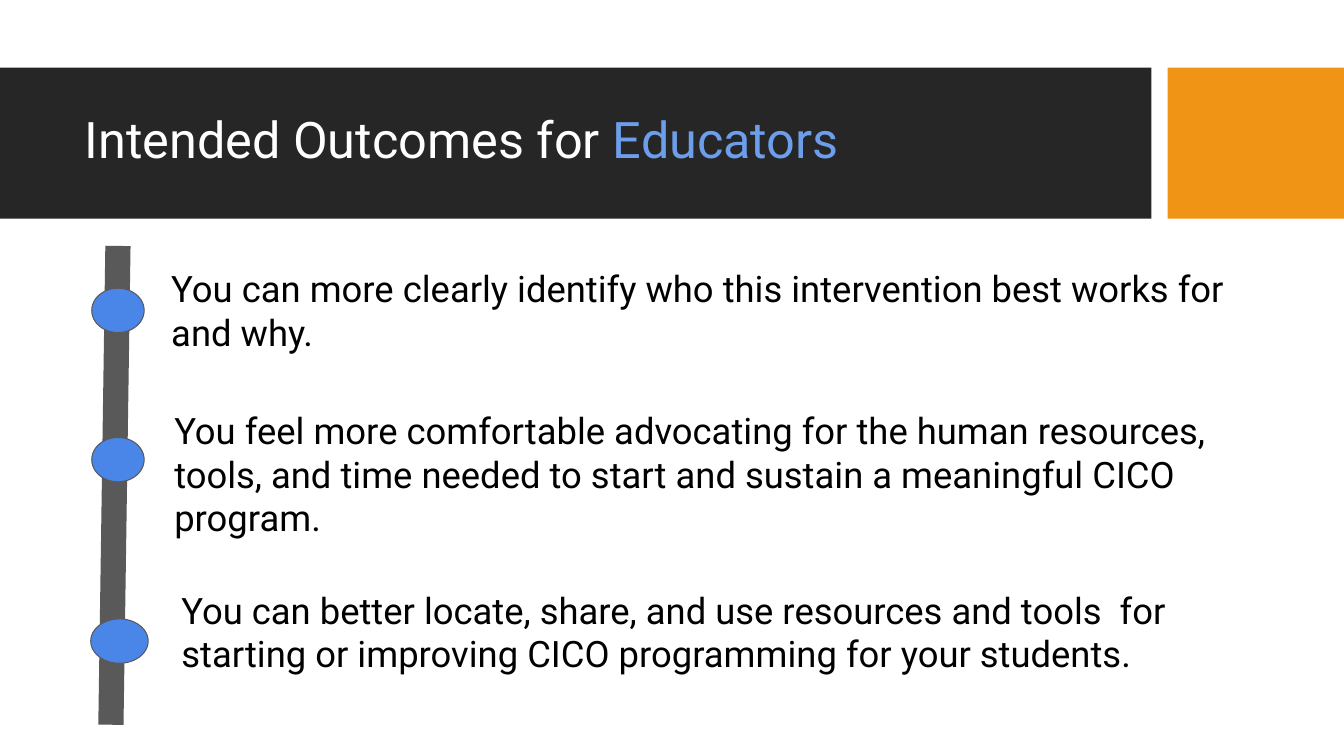
from dataclasses import dataclass

from lxml import etree
from pptx import Presentation
from pptx import util as u
from pptx.dml.color import RGBColor
from pptx.enum import shapes, text
from pptx.oxml import ns

FONT = "Roboto"
WHITE = RGBColor(0xFF, 0xFF, 0xFF)
BLACK = RGBColor(0x00, 0x00, 0x00)
CHARCOAL = RGBColor(0x26, 0x26, 0x26)
ORANGE = RGBColor(0xF0, 0x94, 0x15)
LIGHT_BLUE = RGBColor(0x6D, 0x9E, 0xEB)
BLUE = RGBColor(0x4A, 0x86, 0xE8)
GREY = RGBColor(0x59, 0x59, 0x59)

BAND_TOP, BAND_HEIGHT = 0.67, 1.5
DOT_HEIGHT = 0.44


@dataclass
class Box:
    left: float
    top: float
    width: float
    height: float

    def lengths(self) -> list[u.Length]:
        return [u.Inches(n) for n in (self.left, self.top, self.width, self.height)]


@dataclass
class Outcome:
    wording: str
    dot: Box
    box: Box


OUTCOMES = [
    Outcome(
        "You can more clearly identify who this intervention best works for and why.",
        Box(0.91, 2.86, 0.52, DOT_HEIGHT),
        Box(1.6, 2.54, 10.82, 1.08),
    ),
    Outcome(
        "You feel more comfortable advocating for the human resources, tools, "
        "and time needed to start and sustain a meaningful CICO program.",
        Box(0.91, 4.34, 0.52, DOT_HEIGHT),
        Box(1.63, 3.95, 10.82, 1.52),
    ),
    Outcome(
        "You can better locate, share, and use resources and tools  for "
        "starting or improving CICO programming for your students.",
        Box(0.9, 6.14, 0.57, DOT_HEIGHT),
        Box(1.7, 5.73, 11.25, 1.08),
    ),
]


def style_font(font, size: float, color: RGBColor) -> None:
    font.name = FONT
    font.size = u.Pt(size)
    font.color.rgb = color


def add_filled_shape(slide, kind, box: Box, fill: RGBColor):
    shape = slide.shapes.add_shape(kind, *box.lengths())
    shape.shadow.inherit = False
    shape.fill.solid()
    shape.fill.fore_color.rgb = fill
    shape.line.fill.background()
    return shape


def add_header(slide) -> None:
    """Draw the header band behind the title and fill the title placeholder."""
    title = slide.shapes.title
    bands = (
        (Box(0, BAND_TOP, 11.42, BAND_HEIGHT), CHARCOAL),
        (Box(11.58, BAND_TOP, 1.75, BAND_HEIGHT), ORANGE),
    )
    for box, color in bands:
        band = add_filled_shape(slide, shapes.MSO_SHAPE.RECTANGLE, box, color)
        title._element.addprevious(band._element)

    title.left, title.top, title.width, title.height = Box(0.74, 0.82, 10.51, 1.18).lengths()
    frame = title.text_frame
    frame.auto_size = text.MSO_AUTO_SIZE.NONE
    frame.vertical_anchor = text.MSO_ANCHOR.MIDDLE
    paragraph = frame.paragraphs[0]
    paragraph.alignment = text.PP_ALIGN.LEFT
    paragraph.line_spacing = 0.9
    for wording, color in (("Intended Outcomes for ", WHITE), ("Educators", LIGHT_BLUE)):
        run = paragraph.add_run()
        run.text = wording
        style_font(run.font, 36, color)


def add_timeline(slide) -> None:
    line = slide.shapes.add_connector(
        shapes.MSO_CONNECTOR.STRAIGHT,
        u.Inches(1.17), u.Inches(2.44), u.Inches(1.1), u.Inches(7.19),
    )
    line.line.color.rgb = GREY
    line.line.width = u.Pt(18)
    etree.SubElement(line._element.spPr, ns.qn("a:effectLst"))


def add_outcome(slide, outcome: Outcome) -> None:
    dot = add_filled_shape(slide, shapes.MSO_SHAPE.OVAL, outcome.dot, BLUE)
    dot.line.color.rgb = GREY
    dot.line.width = u.Pt(0.75)

    frame = slide.shapes.add_textbox(*outcome.box.lengths()).text_frame
    frame.word_wrap = True
    frame.auto_size = text.MSO_AUTO_SIZE.SHAPE_TO_FIT_TEXT
    frame.margin_left = frame.margin_right = u.Inches(0.1)
    frame.margin_top = frame.margin_bottom = u.Inches(0.1)
    frame.text = outcome.wording
    style_font(frame.paragraphs[0].runs[0].font, 26, BLACK)


def main() -> None:
    presentation = Presentation()
    presentation.slide_width = u.Inches(13.33)
    presentation.slide_height = u.Inches(7.5)
    slide = presentation.slides.add_slide(presentation.slide_layouts.get_by_name("Title Only"))
    add_header(slide)
    add_timeline(slide)
    for outcome in OUTCOMES:
        add_outcome(slide, outcome)
    presentation.save("out.pptx")


if __name__ == "__main__":
    main()
